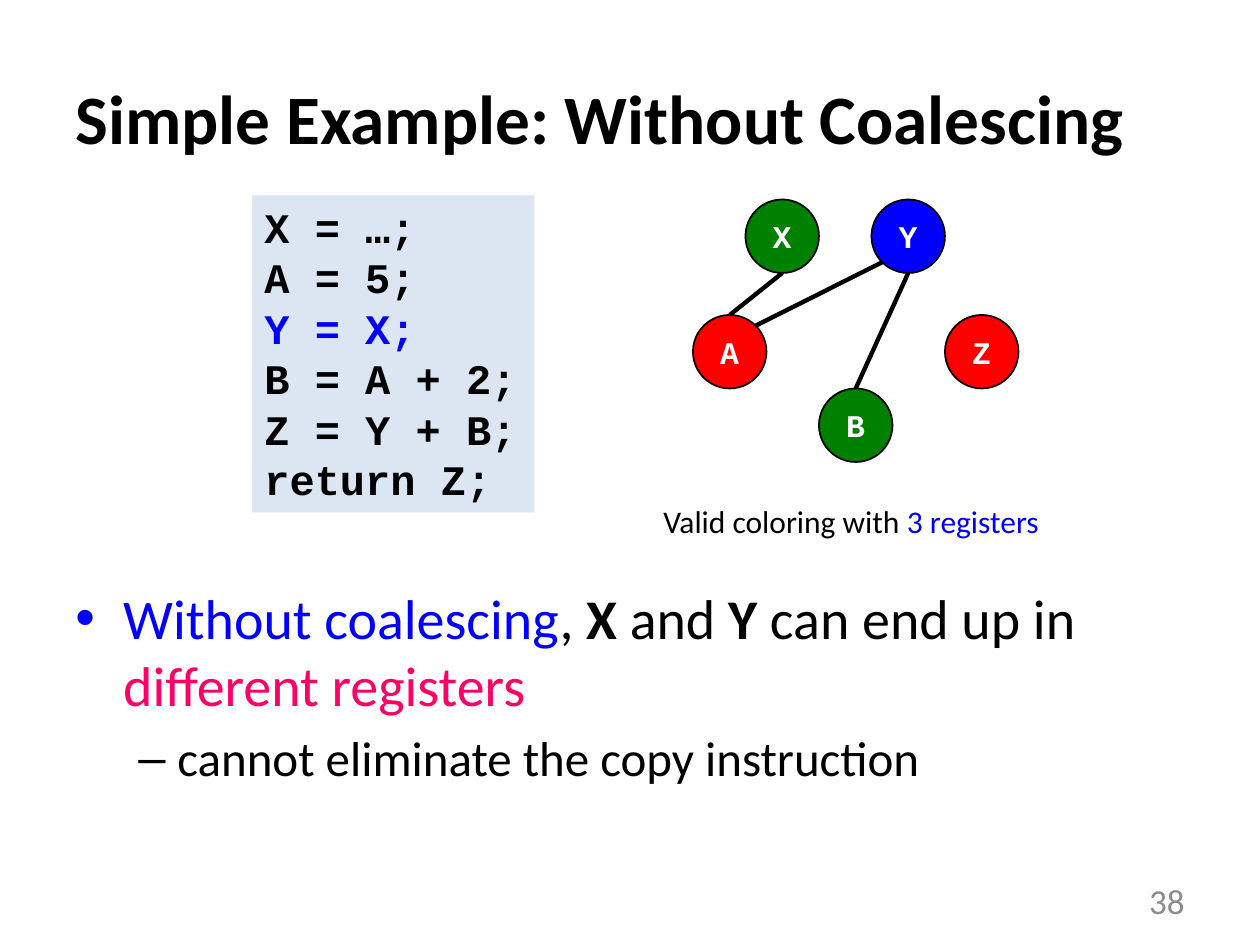
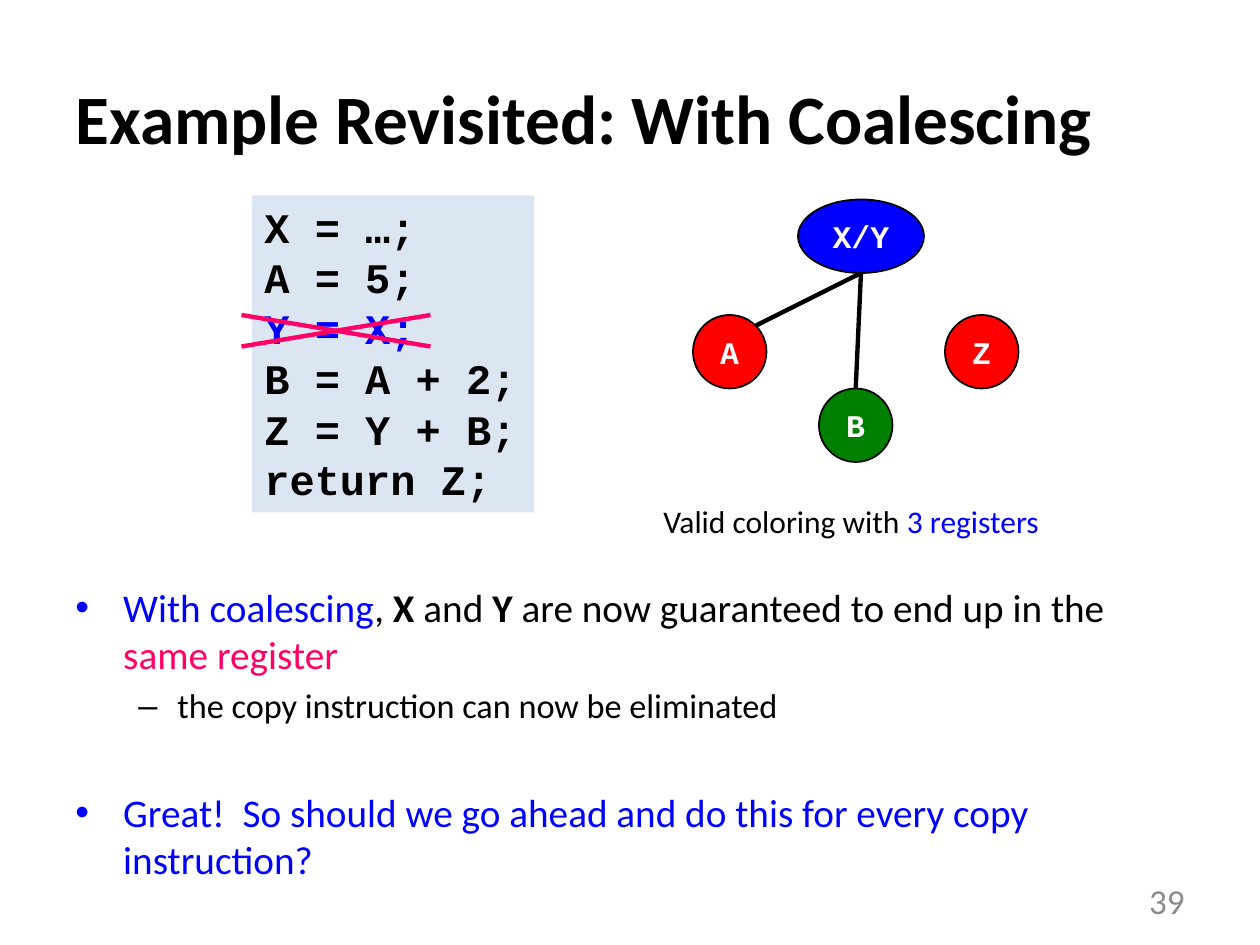
import math

import pptx
import pptx.dml.color
import pptx.enum.shapes
import pptx.enum.text
import pptx.util
from lxml import etree
from pptx.oxml.ns import qn

UNIT = pptx.util.Inches(10) // 120
SANS, MONO = "Calibri", "Courier New"
BLACK, WHITE, GREY, PALE = "000000", "FFFFFF", "8C8C8C", "DCE6F2"
BLUE, GREEN, RED, PINK = "0000FF", "008000", "FF0000", "FF0066"
ALIGN = pptx.enum.text.PP_ALIGN
ANCHOR = pptx.enum.text.MSO_ANCHOR
SHAPE = pptx.enum.shapes.MSO_SHAPE
LEVELS = [("•", 0.38, -0.38), ("–", 0.81, -0.31)]
CODE = ["X = …;", "A = 5;", "Y = X;", "B = A + 2;", "Z = Y + B;", "return Z;"]
NODE = 7
SHARED_NODES = {
    "A": (66, 30, NODE, RED),
    "Z": (90, 30, NODE, RED),
    "B": (78, 37, NODE, GREEN),
}
TOP, UPPER_RIGHT, BOTTOM, LOWER_LEFT = -90, -45, 90, 135


def rgb(color):
    """Turn a hex string into a colour."""
    return pptx.dml.color.RGBColor.from_string(color)


def grid(*units):
    """Turn grid units into lengths."""
    return [round(u * UNIT) for u in units]


def style(r, size, color=BLACK, bold=False, font=SANS):
    """Format one run."""
    r.font.size = pptx.util.Pt(size)
    r.font.name = font
    r.font.bold = bold
    r.font.color.rgb = rgb(color)


def add_runs(p, parts, size):
    """Fill a paragraph with (text, colour, bold) parts."""
    for text, color, bold in parts:
        r = p.add_run()
        r.text = text
        style(r, size, color, bold)


def add_box(slide, *box, wrap=True):
    """Add a text box and return its text frame."""
    tf = slide.shapes.add_textbox(*grid(*box)).text_frame
    tf.word_wrap = wrap
    return tf


def add_shape(slide, kind, box, fill, line=None):
    """Add a filled shape without shadow."""
    sp = slide.shapes.add_shape(kind, *grid(*box))
    sp.shadow.inherit = False
    sp.fill.solid()
    sp.fill.fore_color.rgb = rgb(fill)
    if line:
        sp.line.color.rgb = rgb(line)
        sp.line.width = pptx.util.Pt(1)
    else:
        sp.line.fill.background()
    return sp


def add_line(slide, start, end, color):
    """Draw a straight line between two grid points."""
    kind = pptx.enum.shapes.MSO_CONNECTOR.STRAIGHT
    cxn = slide.shapes.add_connector(kind, *grid(*start, *end))
    cxn.line.color.rgb = rgb(color)
    cxn.line.width = pptx.util.Pt(2.5)
    etree.SubElement(cxn._element.spPr, qn("a:effectLst"))


def add_title(slide, text):
    """Place and format the slide title."""
    sp = slide.shapes.title
    sp.left, sp.top, sp.width, sp.height = grid(6, 3.6, 108, 15)
    tf = sp.text_frame
    tf.text = text
    tf.auto_size = pptx.enum.text.MSO_AUTO_SIZE.NONE
    tf.vertical_anchor = ANCHOR.MIDDLE
    p = tf.paragraphs[0]
    p.alignment = ALIGN.LEFT
    style(p.runs[0], 39.6, bold=True)


def add_number(slide, number):
    """Add the slide number at the lower right."""
    tf = add_box(slide, 86, 83.4, 28, 4.8)
    tf.text = str(number)
    tf.vertical_anchor = ANCHOR.MIDDLE
    p = tf.paragraphs[0]
    p.alignment = ALIGN.RIGHT
    style(p.runs[0], 20, GREY)


def add_code(slide):
    """Add the program with its copy instruction highlighted."""
    tf = add_shape(slide, SHAPE.RECTANGLE, (24, 18.6, 26.9, 30.2), PALE).text_frame
    tf.word_wrap = False
    tf.vertical_anchor = ANCHOR.TOP
    tf.text = "\n".join(CODE)
    for p in tf.paragraphs:
        p.alignment = ALIGN.LEFT
        style(p.runs[0], 24, BLUE if p.text == "Y = X;" else BLACK, True, MONO)


def rim(node, angle):
    """Return the point of a node's outline at an angle in degrees."""
    x, y, width, _ = node
    a = math.radians(angle)
    return (x + width / 2 * (1 + math.cos(a)), y + NODE / 2 * (1 + math.sin(a)))


def add_graph(slide, nodes, edges):
    """Draw the interference graph and its caption."""
    for name, angle, other, other_angle in edges:
        add_line(slide, rim(nodes[name], angle), rim(nodes[other], other_angle), BLACK)
    for name, (x, y, width, fill) in nodes.items():
        sp = add_shape(slide, SHAPE.OVAL, (x, y, width, NODE), fill, BLACK)
        tf = sp.text_frame
        tf.text = name
        tf.word_wrap = False
        tf.vertical_anchor = ANCHOR.MIDDLE
        p = tf.paragraphs[0]
        p.alignment = ALIGN.CENTER
        style(p.runs[0], 18, WHITE, True, MONO)
    tf = add_box(slide, 62, 47.2, 39, 4.8, wrap=False)
    caption = [("Valid coloring with ", BLACK, False), ("3 registers", BLUE, False)]
    add_runs(tf.paragraphs[0], caption, 18)


def add_bullets(slide, items):
    """Add bullets given as (level, size, space before, parts)."""
    tf = add_box(slide, 6, 55, 108, 25)
    for i, (level, size, space, parts) in enumerate(items):
        p = tf.add_paragraph() if i else tf.paragraphs[0]
        char, margin, indent = LEVELS[level]
        p.level = level
        p.space_before = pptx.util.Pt(space)
        pPr = p._p.get_or_add_pPr()
        pPr.set("marL", str(pptx.util.Inches(margin)))
        pPr.set("indent", str(pptx.util.Inches(indent)))
        etree.SubElement(pPr, qn("a:buFont"), typeface="Arial")
        etree.SubElement(pPr, qn("a:buChar"), char=char)
        add_runs(p, parts, size)


def outcome(subject, middle, result):
    """Return the parts of the sentence about X and Y."""
    return [(subject, BLUE, False), (", ", BLACK, False), ("X", BLACK, True),
            (" and ", BLACK, False), ("Y", BLACK, True),
            (middle, BLACK, False), (result, PINK, False)]


def add_example(prs, number, title, nodes, edges, bullets):
    """Add one example slide and return it."""
    slide = prs.slides.add_slide(prs.slide_layouts[5])
    add_title(slide, title)
    add_bullets(slide, bullets)
    add_number(slide, number)
    add_code(slide)
    add_graph(slide, {**SHARED_NODES, **nodes}, edges)
    return slide


def main():
    """Build both slides and save them."""
    prs = pptx.Presentation()
    prs.slide_width, prs.slide_height = grid(120, 90)

    add_example(
        prs, 38, "Simple Example: Without Coalescing",
        {"X": (71, 19, NODE, GREEN), "Y": (83, 19, NODE, BLUE)},
        [("Y", LOWER_LEFT, "A", UPPER_RIGHT), ("X", BOTTOM, "A", TOP),
         ("Y", BOTTOM, "B", TOP)],
        [(0, 32, 6.4, outcome("Without coalescing", " can end up in ",
                              "different registers")),
         (1, 28, 5.6, [("cannot eliminate the copy instruction", BLACK, False)])])

    slide = add_example(
        prs, 39, "Example Revisited: With Coalescing",
        {"X/Y": (76, 19, 12, BLUE)},
        [("X/Y", BOTTOM, "A", UPPER_RIGHT), ("X/Y", BOTTOM, "B", TOP)],
        [(0, 22.4, 4.5, outcome("With coalescing",
                                " are now guaranteed to end up in the ",
                                "same register")),
         (1, 19.6, 3.9, [("the copy instruction can now be eliminated",
                          BLACK, False)]),
         (0, 22.4, 36, [("Great!  So should we go ahead and do this for "
                         "every copy instruction?", BLUE, False)])])
    for start, end in ((23, 41), (41, 23)):
        add_line(slide, (start, 33), (end, 30), PINK)

    prs.save("out.pptx")


if __name__ == "__main__":
    main()
